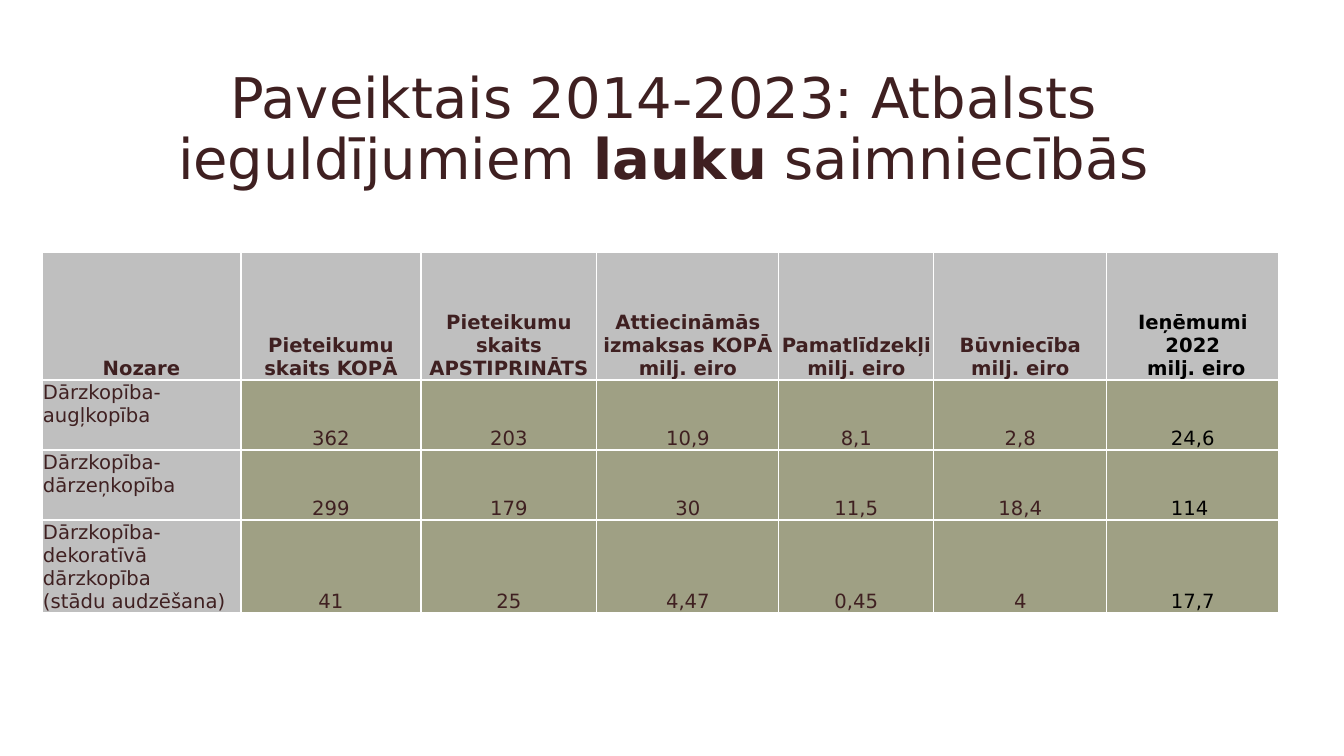
from copy import deepcopy

from lxml.etree import SubElement
from pptx import Presentation
from pptx.dml.color import RGBColor
from pptx.enum.text import MSO_ANCHOR, MSO_AUTO_SIZE, PP_ALIGN
from pptx.oxml.ns import qn
from pptx.util import Emu, Pt

SCALE = 914400 / 100.8
DARK, BLACK, WHITE = "3F2021", "000000", "FFFFFF"
GREY, OLIVE = "BFBFBF", "9FA084"
COLS = [199, 180, 176, 182, 155, 173, 172]
ROWS = [128, 70, 70, 93]
DATA = [
    ["Nozare", "Pieteikumu skaits KOPĀ", "Pieteikumu skaits APSTIPRINĀTS",
     "Attiecināmās izmaksas KOPĀ milj. eiro", "Pamatlīdzekļi milj. eiro",
     "Būvniecība\vmilj. eiro", "Ieņēmumi 2022\n milj. eiro"],
    ["Dārzkopība-\vaugļkopība", "362", "203", "10,9", "8,1", "2,8", "24,6"],
    ["Dārzkopība-dārzeņkopība", "299", "179", "30", "11,5", "18,4", "114 "],
    ["Dārzkopība-\vdekoratīvā dārzkopība\v(stādu audzēšana)",
     "41", "25", "4,47", "0,45", "4", "17,7"],
]


def px(n):
    return Emu(round(n * SCALE))


def color(code):
    return RGBColor.from_string(code)


def write(frame, text, size=14, tint=DARK, bold=False,
          align=PP_ALIGN.CENTER, space=None, font="DejaVu Sans"):
    for i, block in enumerate(text.split("\n")):
        para = frame.add_paragraph() if i else frame.paragraphs[0]
        para.alignment = align
        para.line_spacing = space
        for j, line in enumerate(block.split("\v")):
            if j:
                para.add_line_break()
                para._p[-1].append(deepcopy(run._r.rPr))
            for k, part in enumerate(line.split("*")):
                run = para.add_run()
                run.text = part
                run.font.name = font
                run.font.size = Pt(size)
                run.font.bold = bold or k % 2 == 1
                run.font.color.rgb = color(tint)


class Deck:
    def __init__(self, wide, high):
        self.show = Presentation()
        self.show.slide_width, self.show.slide_height = px(wide), px(high)
        self.slide = self.show.slides.add_slide(self.show.slide_layouts[5])

    def title(self, text, x, y, w, h):
        box = self.slide.shapes.title
        box.left, box.top, box.width, box.height = map(px, (x, y, w, h))
        frame = box.text_frame
        frame.word_wrap = True
        frame.auto_size = MSO_AUTO_SIZE.NONE
        frame.vertical_anchor = MSO_ANCHOR.MIDDLE
        write(frame, text, size=40, space=0.9)

    def border(self, cell):
        props = cell._tc.get_or_add_tcPr()
        for side in ("lnL", "lnR", "lnT", "lnB"):
            line = SubElement(props, qn(f"a:{side}"), w=str(Pt(1)))
            fill = SubElement(line, qn("a:solidFill"))
            SubElement(fill, qn("a:srgbClr"), val=WHITE)

    def cell(self, cell, text, fill, anchor, **style):
        self.border(cell)
        cell.fill.solid()
        cell.fill.fore_color.rgb = color(fill)
        cell.margin_left = cell.margin_right = cell.margin_top = px(1)
        cell.margin_bottom = 0
        cell.vertical_anchor = anchor
        write(cell.text_frame, text, **style)

    def table(self, data, x, y, cols, rows):
        spot = map(px, (x, y, sum(cols), sum(rows)))
        grid = self.slide.shapes.add_table(len(rows), len(cols), *spot).table
        grid.first_row = grid.horz_banding = False
        for col, w in zip(grid.columns, cols):
            col.width = px(w)
        for row, h in zip(grid.rows, rows):
            row.height = px(h)
        for r, texts in enumerate(data):
            for c, text in enumerate(texts):
                head, name = r == 0, r > 0 and c == 0
                self.cell(
                    grid.cell(r, c), text,
                    GREY if head or name else OLIVE,
                    MSO_ANCHOR.TOP if name else MSO_ANCHOR.BOTTOM,
                    bold=head,
                    tint=BLACK if c == len(cols) - 1 else DARK,
                    align=PP_ALIGN.LEFT if name else PP_ALIGN.CENTER)


def main():
    deck = Deck(1344, 756)
    deck.title("Paveiktais 2014-2023: Atbalsts ieguldījumiem *lauku* saimniecībās",
               84, 58, 1159, 146)
    deck.table(DATA, 42, 252, COLS, ROWS)
    deck.show.save("out.pptx")


if __name__ == "__main__":
    main()
